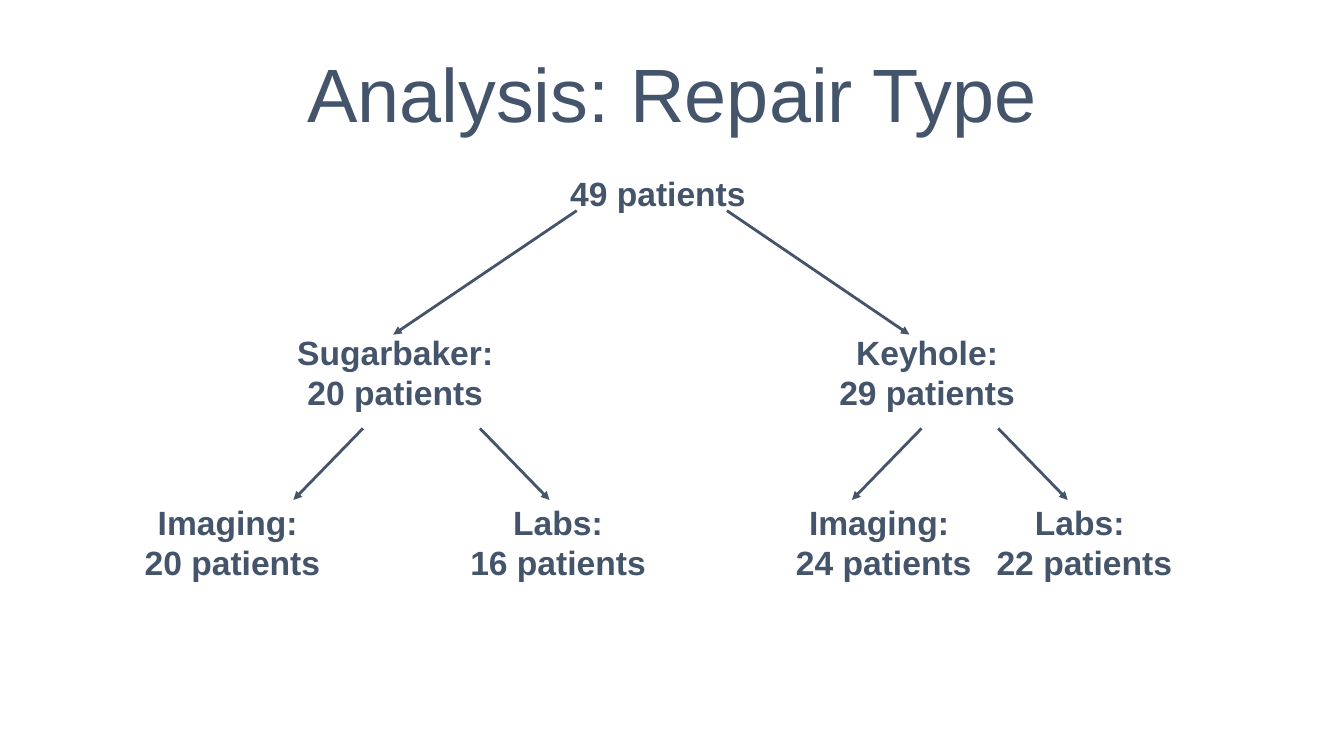
from lxml import etree
from pptx import Presentation
from pptx.dml.color import RGBColor
from pptx.enum.shapes import MSO_CONNECTOR
from pptx.enum.text import MSO_ANCHOR, MSO_AUTO_SIZE, PP_ALIGN
from pptx.oxml.ns import qn
from pptx.util import Inches, Pt

STRAIGHT = MSO_CONNECTOR.STRAIGHT
MIDDLE = MSO_ANCHOR.MIDDLE
CENTER = PP_ALIGN.CENTER
GROW = MSO_AUTO_SIZE.SHAPE_TO_FIT_TEXT

COLORS = {"slate": "44546A", "white": "FFFFFF"}
SLATE = RGBColor.from_string(COLORS["slate"])
FONT = "Arial"

prs = Presentation()
prs.slide_width = Inches(13.33)
prs.slide_height = Inches(7.5)
slide = prs.slides.add_slide(prs.slide_layouts[6])
slide.background.fill.solid()
slide.background.fill.fore_color.rgb = RGBColor.from_string(COLORS["white"])


def add_text(lines, left, top, width, height, size, bold):
    box = slide.shapes.add_textbox(
        Inches(left), Inches(top), Inches(width), Inches(height))
    frame = box.text_frame
    frame.vertical_anchor = MIDDLE
    for i, line in enumerate(lines):
        para = frame.paragraphs[0] if i == 0 else frame.add_paragraph()
        para.alignment = CENTER
        run = para.add_run()
        run.text = line
        run.font.name = FONT
        run.font.size = Pt(size)
        run.font.bold = bold
        run.font.color.rgb = SLATE
    return frame


title = add_text(["Analysis: Repair Type"], 0, 0.25, 13.33, 1.45, 54, False)
title.word_wrap = True
title.paragraphs[0].line_spacing = 0.9

nodes = [
    (["49 patients"], 5.59, 1.66, 1.87, 0.52),
    (["Sugarbaker:", "20 patients"], 2.88, 3.23, 2.08, 0.92),
    (["Keyhole:", "29 patients"], 8.26, 3.23, 1.87, 0.92),
    (["Imaging: ", "20 patients"], 1.37, 4.92, 1.87, 0.92),
    (["Labs:", "16 patients"], 4.6, 4.92, 1.87, 0.92),
    (["Imaging: ", "24 patients"], 7.83, 4.92, 1.87, 0.92),
    (["Labs: ", "22 patients"], 9.82, 4.92, 1.87, 0.92),
]
for lines, left, top, width, height in nodes:
    frame = add_text(lines, left, top, width, height, 24, True)
    frame.word_wrap = False
    frame.auto_size = GROW
    frame.margin_left = frame.margin_right = Inches(0.06)
    frame.margin_top = frame.margin_bottom = Inches(0.06)

tiers = [
    (2.09, 3.32, [(5.72, 3.9), (7.21, 9.02)]),
    (4.25, 4.96, [(3.6, 2.91), (4.76, 5.45), (9.14, 8.45), (9.9, 10.59)]),
]
for top, bottom, spans in tiers:
    for start, end in spans:
        arrow = slide.shapes.add_connector(
            STRAIGHT, Inches(start), Inches(top), Inches(end), Inches(bottom))
        arrow.line.color.rgb = SLATE
        arrow.line.width = Pt(2)
        stroke = arrow.line._get_or_add_ln()
        etree.SubElement(stroke, qn("a:tailEnd"), type="triangle")
        etree.SubElement(arrow._element.spPr, qn("a:effectLst"))

prs.save("out.pptx")
